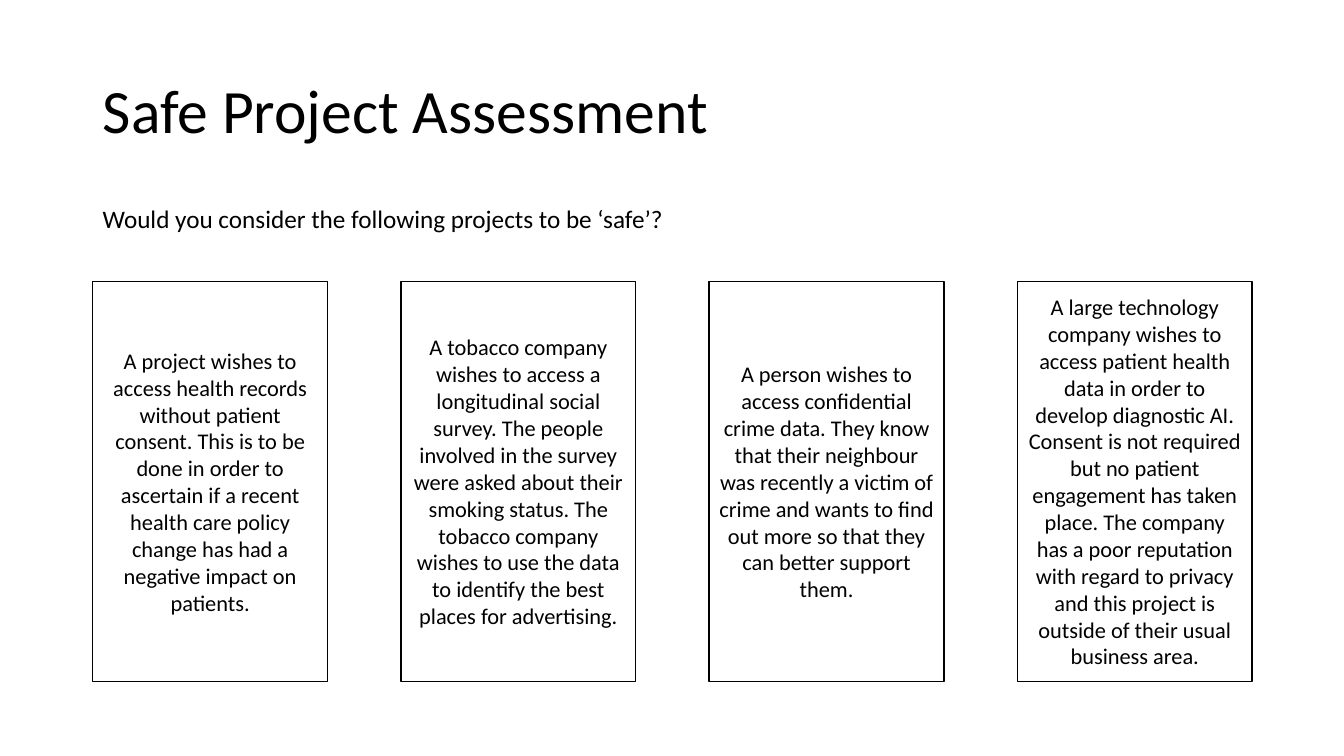
import dataclasses

import pptx
import pptx.dml.color
import pptx.enum.shapes
import pptx.enum.text
import pptx.util

Inches = pptx.util.Inches
Anchor = pptx.enum.text.MSO_ANCHOR
Align = pptx.enum.text.PP_ALIGN


@dataclasses.dataclass(frozen=True)
class Theme:
    font: str = "Calibri"
    ink: str = "000000"
    paper: str = "FFFFFF"
    title_size: int = 44
    question_size: int = 18
    project_size: int = 16
    outline: float = 1


class SlideBuilder:
    def __init__(self, slide, theme):
        self.slide = slide
        self.theme = theme

    def color(self, value):
        return pptx.dml.color.RGBColor.from_string(value)

    def set_text(self, shape, text, size, anchor, align, line_spacing=1.0, before=0):
        frame = shape.text_frame
        frame.text = text
        frame.word_wrap = True
        frame.vertical_anchor = anchor
        paragraph = frame.paragraphs[0]
        paragraph.alignment = align
        paragraph.line_spacing = line_spacing
        paragraph.space_before = pptx.util.Pt(before)
        font = paragraph.runs[0].font
        font.name = self.theme.font
        font.size = pptx.util.Pt(size)
        font.color.rgb = self.color(self.theme.ink)

    def title(self, text, left, top, width, height):
        heading = self.slide.shapes.title
        heading.left, heading.top = Inches(left), Inches(top)
        heading.width, heading.height = Inches(width), Inches(height)
        self.set_text(heading, text, self.theme.title_size, Anchor.MIDDLE, Align.LEFT, 0.9)

    def question(self, text, left, top, width, height):
        box = self.slide.shapes.add_textbox(
            Inches(left), Inches(top), Inches(width), Inches(height))
        self.set_text(box, text, self.theme.question_size, Anchor.TOP, Align.LEFT, 0.9, 10)

    def project_card(self, text, left, top, width, height):
        card = self.slide.shapes.add_shape(
            pptx.enum.shapes.MSO_SHAPE.RECTANGLE,
            Inches(left), Inches(top), Inches(width), Inches(height))
        card.shadow.inherit = False
        card.fill.solid()
        card.fill.fore_color.rgb = self.color(self.theme.paper)
        card.line.color.rgb = self.color(self.theme.ink)
        card.line.width = pptx.util.Pt(self.theme.outline)
        self.set_text(card, text, self.theme.project_size, Anchor.MIDDLE, Align.CENTER)


PROJECTS = [
    "A project wishes to access health records without patient consent. "
    "This is to be done in order to ascertain if a recent health care policy "
    "change has had a negative impact on patients.",
    "A tobacco company wishes to access a longitudinal social survey. "
    "The people involved in the survey were asked about their smoking status. "
    "The tobacco company wishes to use the data to identify the best places "
    "for advertising.",
    "A person wishes to access confidential crime data. They know that their "
    "neighbour was recently a victim of crime and wants to find out more so "
    "that they can better support them.",
    "A large technology company wishes to access patient health data in order "
    "to develop diagnostic AI. Consent is not required but no patient "
    "engagement has taken place. The company has a poor reputation with regard "
    "to privacy and this project is outside of their usual business area.",
]
MARGIN, CONTENT_WIDTH = 0.92, 11.5
CARD_TOP, CARD_WIDTH, CARD_HEIGHT = 2.79, 2.33, 3.97


def main():
    presentation = pptx.Presentation()
    presentation.slide_width = Inches(13.33)
    presentation.slide_height = Inches(7.5)
    title_only = presentation.slide_layouts[5]
    builder = SlideBuilder(presentation.slides.add_slide(title_only), Theme())

    # Heading and question
    builder.title("Safe Project Assessment", MARGIN, 0.4, CONTENT_WIDTH, 1.45)
    builder.question("Would you consider the following projects to be ‘safe’?",
                     MARGIN, 2, CONTENT_WIDTH, 0.6)

    # Project cards, spread evenly across the content width
    pitch = (CONTENT_WIDTH - CARD_WIDTH) / (len(PROJECTS) - 1)
    for column, project in enumerate(PROJECTS):
        builder.project_card(project, MARGIN + column * pitch,
                             CARD_TOP, CARD_WIDTH, CARD_HEIGHT)

    presentation.save("out.pptx")


if __name__ == "__main__":
    main()
